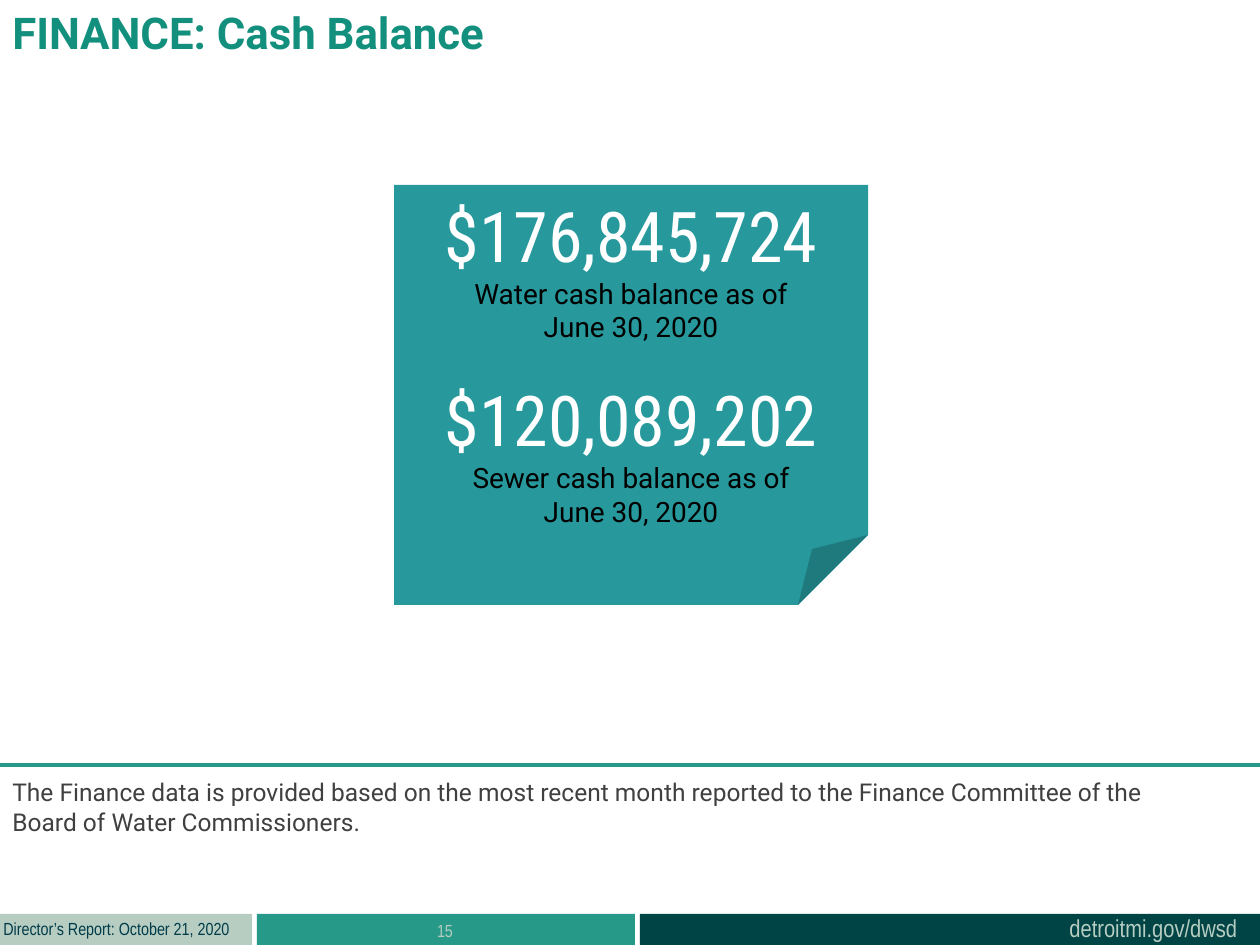
from copy import deepcopy

from lxml import etree
from pptx import Presentation
from pptx.dml.color import RGBColor
from pptx.enum.shapes import MSO_CONNECTOR, MSO_SHAPE
from pptx.enum.text import MSO_ANCHOR, PP_ALIGN
from pptx.oxml.ns import qn
from pptx.util import Inches, Pt

PX = Inches(1) / 126

WHITE = RGBColor(0xFF, 0xFF, 0xFF)
BLACK = RGBColor(0x00, 0x00, 0x00)
GRAY = RGBColor(0x40, 0x40, 0x40)
GREEN = RGBColor(0x13, 0x8F, 0x7E)
TEAL = RGBColor(0x27, 0x99, 0x89)
NOTE_TEAL = RGBColor(0x27, 0x99, 0x9D)
DARK_TEAL = RGBColor(0x00, 0x44, 0x45)
NAVY = RGBColor(0x00, 0x3B, 0x49)
SAGE = RGBColor(0xB7, 0xCD, 0xC2)

TITLE = {"name": "Roboto", "size": Pt(25), "bold": True}
FOOTER = {"name": "Arial Narrow", "size": Pt(10)}
ADDRESS = {"name": "Arial Narrow", "size": Pt(14)}
REMARK = {"name": "Roboto", "size": Pt(14)}
AMOUNT = {"name": "Roboto Condensed", "size": Pt(40)}
CAPTION = {"name": "Roboto", "size": Pt(16)}

FOOTER_BARS = [(0, 252, SAGE), (257, 378, TEAL), (640, 620, DARK_TEAL)]
BALANCES = [
    ("$176,845,724", "Water cash balance as of\vJune 30, 2020"),
    ("$120,089,202", "Sewer cash balance as of\vJune 30, 2020"),
]


def px(*lengths):
    return [round(length * PX) for length in lengths]


def write(paragraph, text, style, color, align=PP_ALIGN.LEFT):
    paragraph.text = text
    paragraph.alignment = align
    for run in paragraph.runs:
        for attribute, value in style.items():
            setattr(run.font, attribute, value)
        run.font.color.rgb = color
    # Line breaks take the text size too, so that line heights stay even.
    for line_break in paragraph._p.findall(qn("a:br")):
        line_break.append(deepcopy(paragraph.runs[0]._r.rPr))


def add_text(slide, box, text, style, color, align=PP_ALIGN.LEFT, wrap=True):
    frame = slide.shapes.add_textbox(*px(*box)).text_frame
    frame.word_wrap = wrap
    write(frame.paragraphs[0], text, style, color, align)


def add_filled(slide, kind, box, color):
    shape = slide.shapes.add_shape(kind, *px(*box))
    shape.shadow.inherit = False
    shape.fill.solid()
    shape.fill.fore_color.rgb = color
    shape.line.fill.background()
    return shape


def add_rule(slide, y):
    rule = slide.shapes.add_connector(MSO_CONNECTOR.STRAIGHT, *px(1260, y, 0, y))
    rule.line.color.rgb = TEAL
    rule.line.width = Pt(2.25)
    etree.SubElement(rule._element.spPr, qn("a:effectLst"))


def add_balance_note(slide):
    note = add_filled(slide, MSO_SHAPE.FOLDED_CORNER, (394, 185, 474, 420), NOTE_TEAL)
    frame = note.text_frame
    frame.word_wrap = True
    frame.vertical_anchor = MSO_ANCHOR.MIDDLE
    for index, (amount, caption) in enumerate(BALANCES):
        paragraph = frame.add_paragraph() if index else frame.paragraphs[0]
        write(paragraph, amount, AMOUNT, WHITE, PP_ALIGN.CENTER)
        if index:
            paragraph.space_before = Pt(19)
        write(frame.add_paragraph(), caption, CAPTION, BLACK, PP_ALIGN.CENTER)


def add_footer(slide):
    for left, width, color in FOOTER_BARS:
        add_filled(slide, MSO_SHAPE.RECTANGLE, (left, 914, width, 31), color)
    add_text(slide, (1057, 907, 195, 43), "detroitmi.gov/dwsd", ADDRESS, SAGE, wrap=False)
    add_text(slide, (-9, 912, 252, 34), "Director’s Report: October 21, 2020",
             FOOTER, NAVY, wrap=False)
    add_text(slide, (256, 914, 378, 31), "15", FOOTER, SAGE, PP_ALIGN.CENTER)


def main():
    presentation = Presentation()
    presentation.slide_width, presentation.slide_height = px(1260, 945)
    slide = presentation.slides.add_slide(presentation.slide_layouts[6])
    add_footer(slide)
    add_text(slide, (0, 0, 956, 97), "FINANCE: Cash Balance", TITLE, GREEN)
    add_rule(slide, 765)
    add_balance_note(slide)
    add_text(slide, (0, 771, 1260, 72),
             "The Finance data is provided based on the most recent month reported "
             "to the Finance Committee of the\vBoard of Water Commissioners.",
             REMARK, GRAY)
    presentation.save("out.pptx")


if __name__ == "__main__":
    main()
